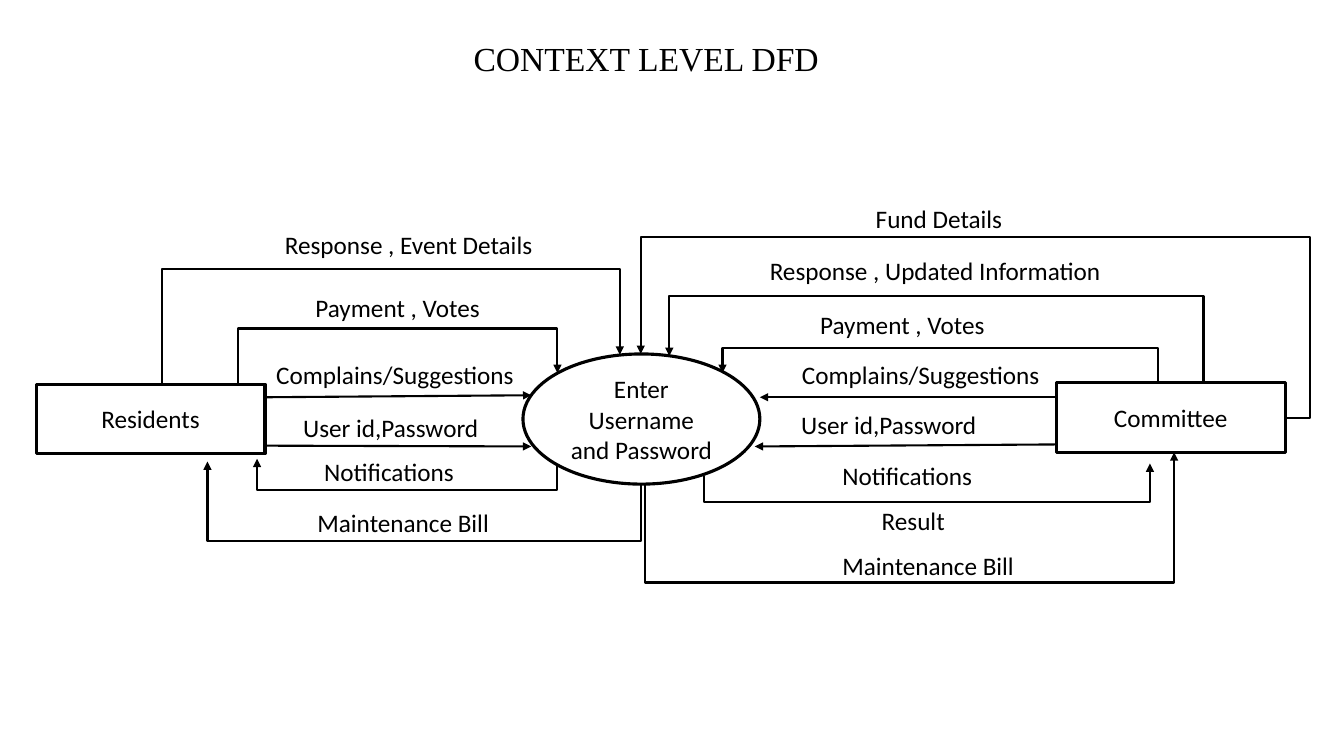
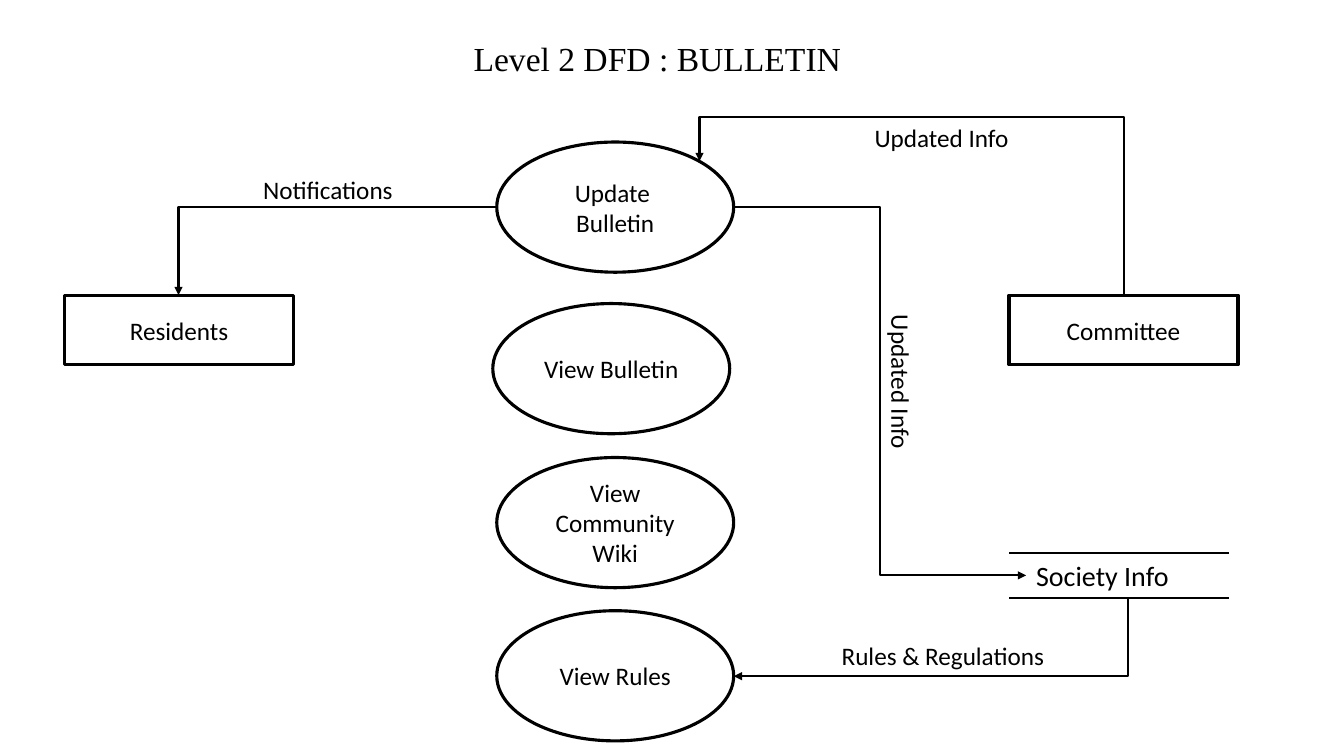
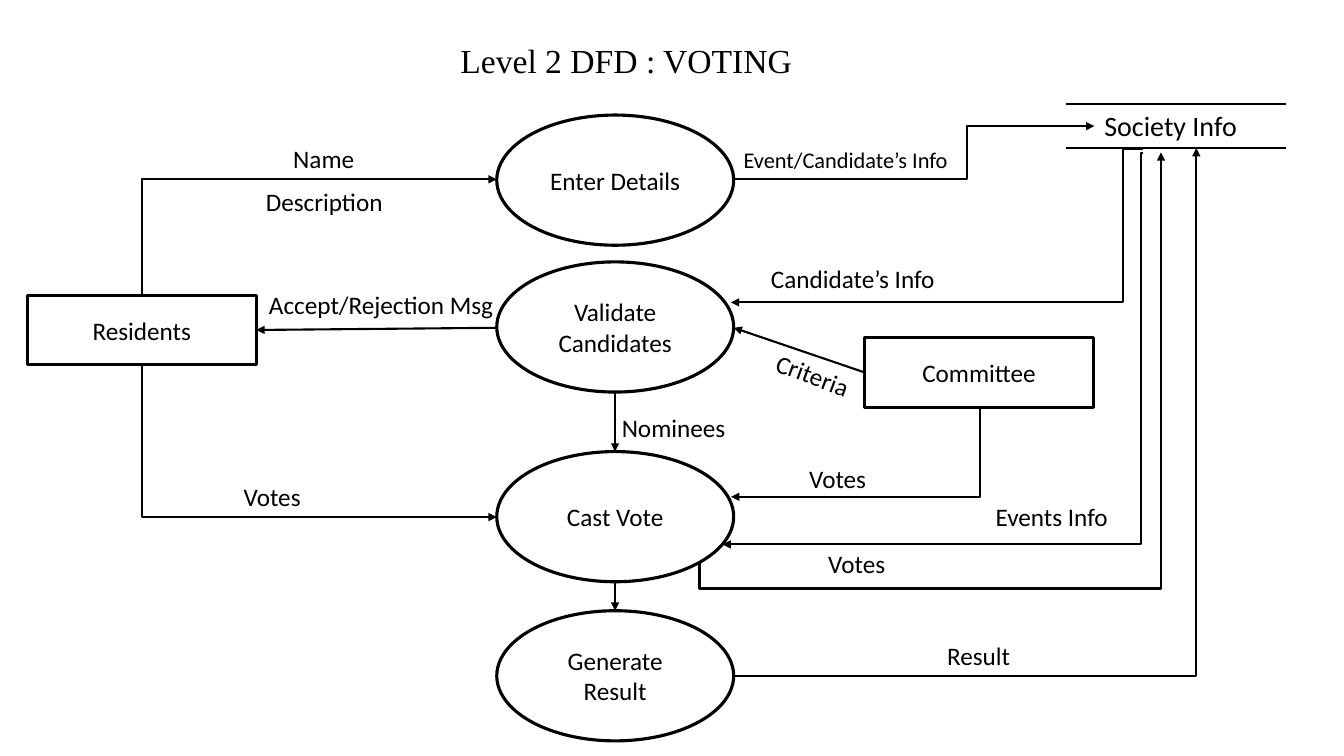
from lxml.etree import SubElement
from pptx import Presentation
from pptx.dml.color import RGBColor
from pptx.enum.shapes import MSO_CONNECTOR as Link, MSO_SHAPE as Kind
from pptx.enum.text import MSO_ANCHOR as Anchor, PP_ALIGN as Align
from pptx.oxml.ns import qn
from pptx.util import Cm, Pt

HUES = {"ink": "000000", "paper": "FFFFFF"}
BODY, HEAD = "Calibri", "Times New Roman"
OVAL, RECT = (5.97, 3.28), (5.77, 1.75)


def hue(name):
    return RGBColor.from_string(HUES[name])


def write(frame, text, size=18, font=BODY, align=Align.LEFT):
    frame.text = text
    frame.word_wrap = True
    for para in frame.paragraphs:
        para.alignment = align
        para.font.size = Pt(size)
        para.font.name = font
        para.font.color.rgb = hue("ink")


class Board:
    """A drawing area; all places are centimetres from its top left corner."""

    def __init__(self, slide, left, top):
        self.slide, self.left, self.top = slide, left, top

    def at(self, x, y):
        return Cm(self.left + x), Cm(self.top + y)

    def title(self, text, x=11.68, y=0.84):
        head = self.slide.shapes.title
        head.left, head.top = self.at(x, y)
        head.width, head.height = Cm(19.5), Cm(1.27)
        write(head.text_frame, text, 24, HEAD)
        head.text_frame.vertical_anchor = Anchor.TOP

    def node(self, kind, text, x, y, size):
        shape = self.slide.shapes.add_shape(kind, *self.at(x, y), *map(Cm, size))
        shape.shadow.inherit = False
        shape.fill.solid()
        shape.fill.fore_color.rgb = hue("paper")
        shape.line.color.rgb = hue("ink")
        shape.line.width = Pt(2.25)
        write(shape.text_frame, text, align=Align.CENTER)
        shape.text_frame.vertical_anchor = Anchor.MIDDLE
        return shape

    def oval(self, text, x, y, high=OVAL[1]):
        return self.node(Kind.OVAL, text, x, y, (OVAL[0], high))

    def rect(self, text, x, y):
        return self.node(Kind.RECTANGLE, text, x, y, RECT)

    def label(self, text, x, y, wide, turn=0, size=18, high=1.02):
        box = self.slide.shapes.add_textbox(*self.at(x, y), Cm(wide), Cm(high))
        box.rotation = turn
        write(box.text_frame, text, size)

    def line(self, x, y, to_x, to_y, kind=Link.STRAIGHT, arrow=True):
        link = self.slide.shapes.add_connector(
            kind, *self.at(x, y), *self.at(to_x, to_y))
        link.line.color.rgb = hue("ink")
        link.line.width = Pt(1.5)
        if arrow:
            SubElement(link.line._ln, qn("a:tailEnd"), type="triangle")
        SubElement(link._element.spPr, qn("a:effectLst"))
        return link

    def route(self, axis, x, y, *stops):
        """Bent arrow from x, y; the stops are reached along axis and across it in turn."""
        first = "hv".index(axis)
        start, end = (x, y), [x, y]
        for i, stop in enumerate(stops):
            end[(first + i) % 2] = stop
        wide, high = end[0] - x, end[1] - y
        mid_x, mid_y = x + wide / 2, y + high / 2
        if axis == "v":
            wide, high = high, -wide
        link = self.line(mid_x - wide / 2, mid_y - high / 2,
                         mid_x + wide / 2, mid_y + high / 2, Link.ELBOW)
        props = link._element.spPr
        if axis == "v":
            props.xfrm.set("rot", "5400000")
        geom = props.prstGeom
        geom.set("prst", f"bentConnector{len(stops)}")
        guides = geom.get_or_add_avLst()
        for i, stop in enumerate(stops[:-2]):
            j = (first + i) % 2
            part = (stop - start[j]) / (end[j] - start[j])
            SubElement(guides, qn("a:gd"), name=f"adj{i + 1}",
                       fmla=f"val {round(part * 100000)}")

    def store(self, text, x, y, inset):
        """Data store: text between two rules."""
        wide, high = 5.55, 1.12
        for rule in (y, y + high):
            self.line(x, rule, x + wide, rule, arrow=False)
        self.label(text, x + inset, y, 5.13, size=20, high=high)

    def fill(self, labels, routes):
        for item in labels:
            self.label(*item)
        for item in routes:
            self.route(*item)


def context(board):
    board.title("CONTEXT LEVEL DFD")
    board.oval("Enter Username and Password", 13.18, 8.92)
    board.rect("Residents", 0.91, 9.68)
    board.rect("Committee", 26.62, 9.65)
    for ends in ((6.71, 10.01, 13.39, 9.96), (6.71, 11.23, 13.39, 11.25),
                 (26.62, 10.01, 19.15, 10.01), (26.62, 11.2, 19.02, 11.25)):
        board.line(*ends)
    both = (
        ("Payment , Votes", 4.93, (7.7, 7.24), (20.42, 7.67)),
        ("Complains/Suggestions", 6.58, (6.71, 8.94), (19.96, 8.92)),
        ("User id,Password", 5.05, (7.39, 10.26), (19.94, 10.19)),
        ("Notifications", 4.8, (7.92, 11.38), (20.98, 11.48)),
        ("Maintenance Bill", 5.64, (7.75, 12.65), (20.98, 13.74)),
    )
    for text, wide, *spots in both:
        for x, y in spots:
            board.label(text, x, y, wide)
    board.fill(
        (("Response , Event Details", 6.93, 5.66, 7.49),
         ("Fund Details", 21.82, 5, 4.8),
         ("Response , Updated Information", 19.15, 6.32, 10.19),
         ("Result", 21.97, 12.6, 3.5)),
        (("v", 4.09, 9.68, 6.78, 15.62, 8.94),
         ("v", 5.99, 9.68, 8.28, 14.05, 9.4),
         ("v", 14.05, 11.71, 12.34, 6.48, 11.56),
         ("v", 16.15, 12.19, 13.64, 5.23, 11.63),
         ("h", 32.39, 10.54, 33.02, 5.97, 16.15, 8.92),
         ("v", 30.33, 9.65, 7.47, 16.87, 8.97),
         ("h", 27.43, 9.63, 29.18, 8.76, 18.21, 9.4),
         ("v", 17.75, 11.99, 12.65, 28.98, 11.68),
         ("v", 16.26, 12.19, 14.68, 29.59, 11.4)))


def bulletin(board):
    board.title("Level 2 DFD : BULLETIN")
    for text, x, y in (("Update \nBulletin", 12.52, 3.58),
                       ("View Bulletin", 12.42, 7.65),
                       ("View Community Wiki", 12.52, 11.53),
                       ("View Rules", 12.52, 15.39)):
        board.oval(text, x, y)
    board.rect("Residents", 1.63, 7.44)
    board.rect("Committee", 25.43, 7.44)
    board.store("Society Info", 25.43, 13.94, 0.43)
    board.fill(
        (("Notifications", 6.38, 4.27, 5.31),
         ("Updated Info", 21.79, 2.97, 4.39),
         ("Updated Info", 20.52, 9.37, 4.39, 90),
         ("Rules & Regulations", 20.96, 16, 5.99)),
        (("h", 12.52, 5.21, 4.5, 7.44),
         ("h", 18.49, 5.21, 22.17, 14.5, 25.86),
         ("v", 28.42, 15.06, 17.04, 18.49),
         ("v", 28.32, 7.44, 2.95, 17.63, 4.06)))


def voting(board):
    board.title("Level 2 DFD : VOTING", 11.35, 0.89)
    for text, y in (("Enter Details", 2.9), ("Validate Candidates", 6.6),
                    ("Cast Vote", 11.38), ("Generate Result", 15.39)):
        board.oval(text, 12.52, y)
    home = board.rect("Residents", 0.69, 7.44)
    panel = board.rect("Committee", 21.79, 8.51)
    board.store("Society Info", 26.87, 2.62, 0.71)
    board.line(12.52, 8.26, 6.46, 8.31).end_connect(home, 3)
    board.line(21.79, 9.38, 18.49, 8.26).begin_connect(panel, 1)
    board.line(15.5, 9.89, 15.5, 11.38)
    board.line(15.5, 14.67, 15.5, 15.39)
    board.fill(
        (("Name", 7.14, 3.48, 5.31),
         ("Description", 6.45, 4.57, 5.31),
         ("Event/Candidate’s Info", 18.49, 3.56, 5.82, 0, 16),
         ("Accept/Rejection Msg", 6.53, 7.16, 6.93),
         ("Candidate’s Info", 19.18, 6.5, 6.88),
         ("Criteria", 19.25, 9.14, 3.56, 20.4),
         ("Nominees", 15.42, 10.26, 4.39),
         ("Votes", 5.89, 12.01, 2.41),
         ("Votes", 20.14, 11.56, 2.41),
         ("Votes", 20.62, 13.69, 2.41),
         ("Events Info", 24.84, 12.52, 5.82),
         ("Result", 23.62, 16, 5.99)),
        (("v", 3.58, 7.44, 4.52, 12.52),
         ("v", 3.58, 9.19, 13.03, 12.52),
         ("h", 18.49, 4.52, 24.38, 3.18, 27.58),
         ("h", 28.8, 3.76, 28.3, 7.62, 18.42),
         ("v", 24.69, 10.26, 12.52, 18.42),
         ("h", 28.8, 3.86, 28.75, 13.72, 18.21),
         ("v", 17.63, 14.2, 14.83, 29.26, 3.84),
         ("h", 18.49, 17.04, 30.15, 3.73)))


def main():
    deck = Presentation()
    deck.slide_width, deck.slide_height = Cm(33.87), Cm(19.05)
    plain = deck.slide_layouts[5]
    for draw in (context, bulletin, voting):
        draw(Board(deck.slides.add_slide(plain), 0, 0))
    deck.save("out.pptx")


if __name__ == "__main__":
    main()
